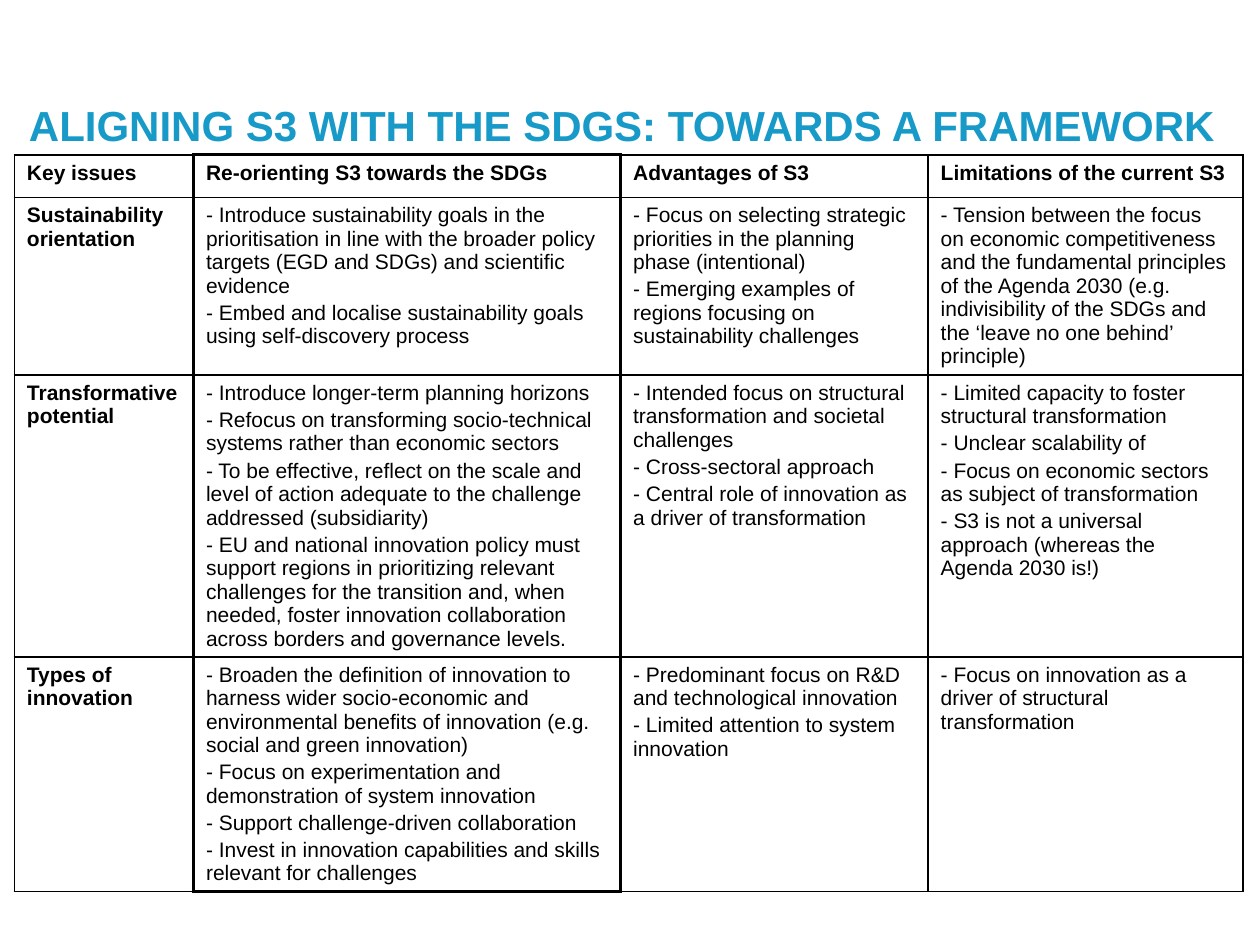
from dataclasses import dataclass

import pptx
import pptx.dml.color
import pptx.enum.text
import pptx.oxml
import pptx.oxml.ns
import pptx.util
from pptx.util import Cm

COLORS = {"title": "189AC8", "ink": "000000", "paper": "FFFFFF"}
FONT = "Arial"
THIN, THICK = 1, 2.25
FRAMED_COLUMN = 1
COLUMN_WIDTHS = (3.61, 8.61, 6.2, 6.35)
HEADERS = (
    "Key issues",
    "Re-orienting S3 towards the SDGs",
    "Advantages of S3",
    "Limitations of the current S3",
)
HEADER_HEIGHT = 0.86


@dataclass(frozen=True)
class Issue:
    name: str
    height: float
    reorienting: tuple[str, ...]
    advantages: tuple[str, ...]
    limitations: tuple[str, ...]


ISSUES = (
    Issue(
        "Sustainability orientation",
        3.58,
        (
            "Introduce sustainability goals in the prioritisation in line with the broader "
            "policy targets (EGD and SDGs) and scientific evidence",
            "Embed and localise sustainability goals using self-discovery process",
        ),
        (
            "Focus on selecting strategic priorities in the planning phase (intentional)",
            "Emerging examples of regions focusing on sustainability challenges",
        ),
        (
            "Tension between the focus on economic competitiveness and the fundamental "
            "principles of the Agenda 2030 (e.g. indivisibility of the SDGs and the "
            "‘leave no one behind’ principle)",
        ),
    ),
    Issue(
        "Transformative potential",
        5.68,
        (
            "Introduce longer-term planning horizons",
            "Refocus on transforming socio-technical systems rather than economic sectors",
            "To be effective, reflect on the scale and level of action adequate to the "
            "challenge addressed (subsidiarity)",
            "EU and national innovation policy must support regions in prioritizing relevant "
            "challenges for the transition and, when needed, foster innovation collaboration "
            "across borders and governance levels.",
        ),
        (
            "Intended focus on structural transformation and societal challenges",
            "Cross-sectoral approach",
            "Central role of innovation as a driver of transformation",
        ),
        (
            "Limited capacity to foster structural transformation",
            "Unclear scalability of",
            "Focus on economic sectors as subject of transformation",
            "S3 is not a universal approach (whereas the Agenda 2030 is!)",
        ),
    ),
    Issue(
        "Types of innovation",
        4.72,
        (
            "Broaden the definition of innovation to harness wider socio-economic and "
            "environmental benefits of innovation (e.g. social and green innovation)",
            "Focus on experimentation and demonstration of system innovation",
            "Support challenge-driven collaboration",
            "Invest in innovation capabilities and skills relevant for challenges",
        ),
        (
            "Predominant focus on R&D and technological innovation",
            "Limited attention to system innovation",
        ),
        ("Focus on innovation as a driver of structural transformation",),
    ),
)


def write_text(frame, *lines: str, size: float = 12, bold: bool = False,
               color: str = "ink", space_after: float = 2) -> None:
    for index, line in enumerate(lines):
        para = frame.paragraphs[0] if index == 0 else frame.add_paragraph()
        para.alignment = pptx.enum.text.PP_ALIGN.LEFT
        para.space_before = pptx.util.Pt(0)
        para.space_after = pptx.util.Pt(space_after)
        span = para.add_run()
        span.text = line
        span.font.name = FONT
        span.font.size = pptx.util.Pt(size)
        span.font.bold = bold
        span.font.color.rgb = pptx.dml.color.RGBColor.from_string(COLORS[color])


def draw_borders(cell, widths: dict[str, float]) -> None:
    properties = cell._tc.get_or_add_tcPr()
    for index, (side, width) in enumerate(widths.items()):
        border = pptx.oxml.parse_xml(
            f'<a:ln{side} {pptx.oxml.ns.nsdecls("a")} w="{pptx.util.Pt(width)}">'
            f'<a:solidFill><a:srgbClr val="{COLORS["ink"]}"/></a:solidFill></a:ln{side}>'
        )
        properties.insert(index, border)


def add_title(page, text: str) -> None:
    box = page.shapes.title
    box.left, box.top, box.width, box.height = Cm(0.33), Cm(1.8), Cm(24.51), Cm(1.8)
    frame = box.text_frame
    frame.word_wrap = True
    frame.auto_size = pptx.enum.text.MSO_AUTO_SIZE.NONE
    frame.vertical_anchor = pptx.enum.text.MSO_ANCHOR.TOP
    frame.margin_top = Cm(0.2)
    write_text(frame, text, size=24, bold=True, color="title", space_after=0)


def add_framework_table(page) -> None:
    rows = [[(header,) for header in HEADERS]]
    for issue in ISSUES:
        points = (issue.reorienting, issue.advantages, issue.limitations)
        rows.append([(issue.name,)] + [[f"- {point}" for point in group] for group in points])
    heights = [HEADER_HEIGHT] + [issue.height for issue in ISSUES]

    table = page.shapes.add_table(
        len(rows), len(HEADERS), Cm(0.29), Cm(3.12),
        Cm(sum(COLUMN_WIDTHS)), Cm(sum(heights)),
    ).table
    for column, width in zip(table.columns, COLUMN_WIDTHS):
        column.width = Cm(width)
    for row, height in zip(table.rows, heights):
        row.height = Cm(height)

    for row_index, row in enumerate(rows):
        for column_index, lines in enumerate(row):
            cell = table.cell(row_index, column_index)
            cell.fill.solid()
            cell.fill.fore_color.rgb = pptx.dml.color.RGBColor.from_string(COLORS["paper"])
            write_text(cell.text_frame, *lines, bold=row_index == 0 or column_index == 0)
            framed = column_index == FRAMED_COLUMN
            thick_sides = {
                "L": column_index in (FRAMED_COLUMN, FRAMED_COLUMN + 1),
                "R": column_index in (FRAMED_COLUMN - 1, FRAMED_COLUMN),
                "T": framed and row_index == 0,
                "B": framed and row_index == len(rows) - 1,
            }
            draw_borders(cell, {side: THICK if thick else THIN
                                for side, thick in thick_sides.items()})


def main() -> None:
    deck = pptx.Presentation()
    deck.slide_width, deck.slide_height = Cm(25.4), Cm(19.05)
    page = deck.slides.add_slide(deck.slide_layouts[5])
    add_title(page, "ALIGNING S3 WITH THE SDGS: TOWARDS A FRAMEWORK")
    add_framework_table(page)
    deck.save("out.pptx")


if __name__ == "__main__":
    main()
